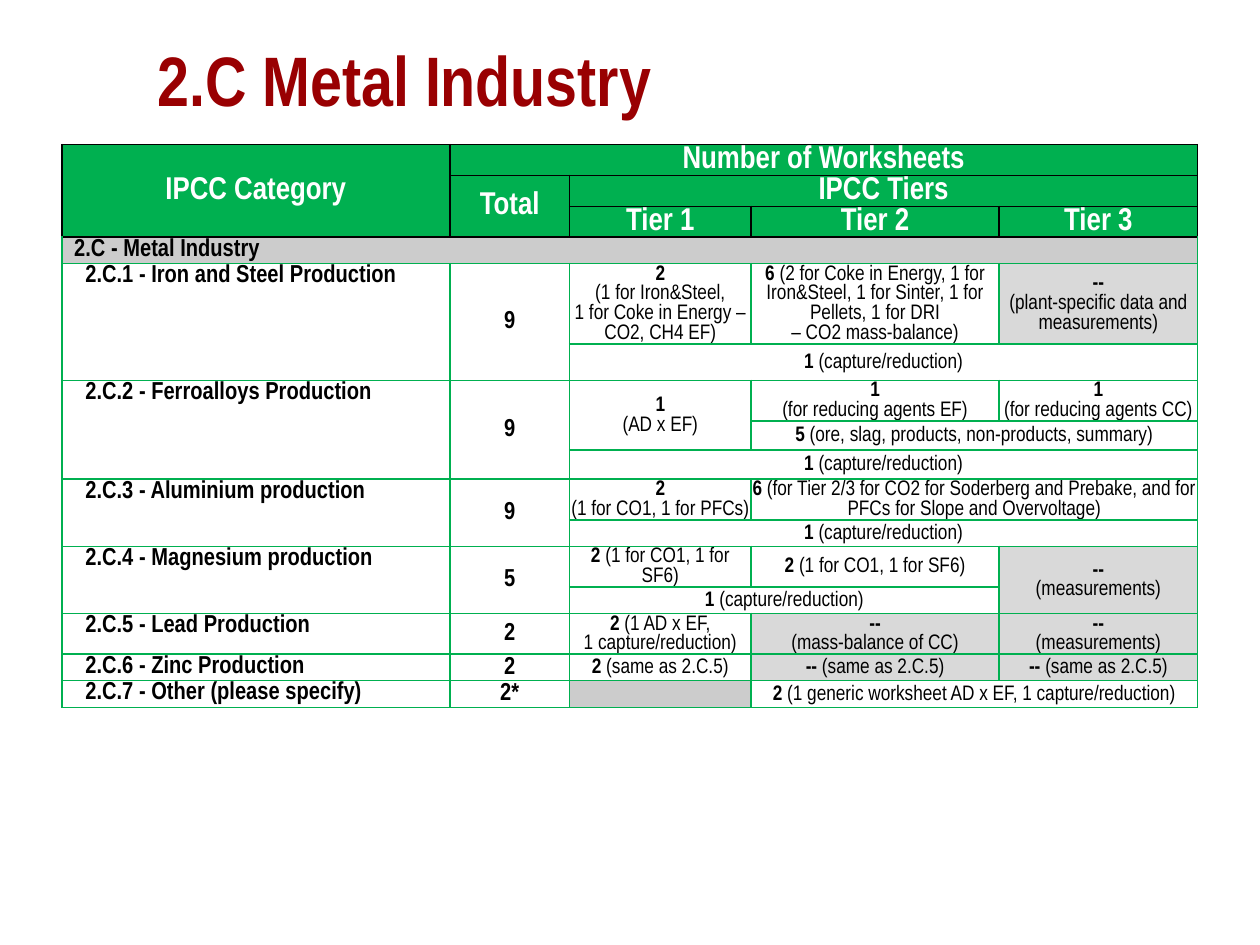
from pptx import Presentation
from pptx.dml.color import RGBColor
from pptx.enum.text import MSO_ANCHOR, MSO_AUTO_SIZE, PP_ALIGN
from pptx.oxml.ns import qn
from pptx.util import Pt
from lxml.etree import SubElement

COLORS = {
    "title": "990002", "green": "00B050", "black": "000000",
    "white": "FFFFFF", "section": "CCCCCC", "unavailable": "D9D9D9",
}
COLUMN_WIDTHS = [221.8, 68.4, 103.7, 141.8, 113.4]
ROW_HEIGHTS = [15.12] * 5 + [20.9] + [16.6] * 3 + [15.12] * 7
HEADER_ROWS = 3
CAPTURE = ["1| (capture/reduction)"]

HEADERS = [
    (0, 0, "IPCC Category", 3, 1),
    (0, 1, "Number of Worksheets", 1, 4),
    (1, 1, "Total", 2, 1),
    (1, 2, "IPCC Tiers", 1, 3),
    (2, 2, "Tier 1", 1, 1),
    (2, 3, "Tier 2", 1, 1),
    (2, 4, "Tier 3", 1, 1),
]
CATEGORIES = [
    ("2.C.1 - Iron and Steel Production", "9", 2),
    ("2.C.2 - Ferroalloys Production", "9", 3),
    ("2.C.3 - Aluminium production", "9", 2),
    ("2.C.4 - Magnesium production", "5", 2),
    ("2.C.5 - Lead Production", "2", 1),
    ("2.C.6 - Zinc Production", "2", 1),
    ("2.C.7 - Other (please specify)", "2*", 1),
]
WORKSHEETS = [
    (4, 2, ["2|", "|(1 for Iron&Steel,", "|1 for Coke in Energy – CO2, CH4 EF)"], 1, 1),
    (4, 3, ["6 |(2 for Coke in Energy, 1 for Iron&Steel, 1 for Sinter, "
            "1 for Pellets, 1 for DRI", "|– CO2 mass-balance)"], 1, 1),
    (5, 2, CAPTURE, 1, 3),
    (6, 2, ["1|", "|(AD x EF)"], 2, 1),
    (6, 3, ["1|", "|(for reducing agents EF)"], 1, 1),
    (6, 4, ["1|", "|(for reducing agents CC)"], 1, 1),
    (7, 3, ["5| (ore, slag, products, non-products, summary)"], 1, 2),
    (8, 2, CAPTURE, 1, 3),
    (9, 2, ["2|", "|(1 for CO1, 1 for PFCs)"], 1, 1),
    (9, 3, ["6| (for Tier 2/3 for CO2 for Soderberg and Prebake, "
            "and for PFCs for Slope and Overvoltage)"], 1, 2),
    (10, 2, CAPTURE, 1, 3),
    (11, 2, ["2| (1 for CO1, 1 for SF6)"], 1, 1),
    (11, 3, ["2| (1 for CO1, 1 for SF6)"], 1, 1),
    (12, 2, CAPTURE, 1, 2),
    (13, 2, ["2| (1 AD x EF,", "|1 capture/reduction)"], 1, 1),
    (14, 2, ["2| (same as 2.C.5)"], 1, 1),
    (15, 3, ["2| (1 generic worksheet AD x EF, 1 capture/reduction)"], 1, 2),
]
UNAVAILABLE = [
    (4, 4, ["--|", "|(plant-specific data and measurements)"], 1, 1),
    (11, 4, ["--|", "|(measurements)"], 2, 1),
    (13, 3, ["--|", "|(mass-balance of CC)"], 1, 1),
    (13, 4, ["--|", "|(measurements)"], 1, 1),
    (14, 3, ["--| (same as 2.C.5)"], 1, 1),
    (14, 4, ["--| (same as 2.C.5)"], 1, 1),
]


class SlideBuilder:
    font_name = "Arial Narrow"

    def __init__(self, slide):
        self.slide = slide

    def run(self, paragraph, text, size, color, bold):
        run = paragraph.add_run()
        run.text = text
        run.font.name = self.font_name
        run.font.size = Pt(size)
        run.font.bold = bold
        run.font.color.rgb = RGBColor.from_string(COLORS[color])

    def title(self, text, left, top, width, height):
        heading = self.slide.shapes.title
        heading.left, heading.top = Pt(left), Pt(top)
        heading.width, heading.height = Pt(width), Pt(height)
        frame = heading.text_frame
        frame.auto_size = MSO_AUTO_SIZE.NONE
        frame.vertical_anchor = MSO_ANCHOR.MIDDLE
        frame.paragraphs[0].alignment = PP_ALIGN.LEFT
        self.run(frame.paragraphs[0], text, 40, "title", True)

    def borders(self, cell, color, top_color):
        properties = cell._tc.get_or_add_tcPr()
        for side in ("lnL", "lnR", "lnT", "lnB"):
            line = SubElement(properties, qn(f"a:{side}"), w=str(Pt(1)))
            fill = SubElement(line, qn("a:solidFill"))
            shade = top_color if side == "lnT" else color
            SubElement(fill, qn("a:srgbClr"), val=COLORS[shade])

    def fill(self, cell, color):
        cell.fill.solid()
        cell.fill.fore_color.rgb = RGBColor.from_string(COLORS[color])

    def table(self, left, top):
        frame = self.slide.shapes.add_table(
            len(ROW_HEIGHTS), len(COLUMN_WIDTHS), Pt(left), Pt(top),
            Pt(sum(COLUMN_WIDTHS)), Pt(sum(ROW_HEIGHTS)))
        self.grid = frame.table
        self.grid.first_row = self.grid.horz_banding = False
        for column, width in zip(self.grid.columns, COLUMN_WIDTHS):
            column.width = Pt(width)
        for index, (row, height) in enumerate(zip(self.grid.rows, ROW_HEIGHTS)):
            row.height = Pt(height)
            line_color = "black" if index < HEADER_ROWS else "green"
            top_color = "black" if index <= HEADER_ROWS else "green"
            for cell in row.cells:
                cell.margin_left = cell.margin_right = cell.margin_top = Pt(0.7)
                cell.margin_bottom = Pt(0)
                self.borders(cell, line_color, top_color)
                self.fill(cell, "white")
                end = cell.text_frame.paragraphs[0]._p.get_or_add_endParaRPr()
                end.set("sz", "1200")

    def cell(self, row, column, lines, row_span=1, column_span=1, fill="white",
             size=12, color="black", indent=None):
        cell = self.grid.cell(row, column)
        if row_span * column_span > 1:
            cell.merge(self.grid.cell(row + row_span - 1, column + column_span - 1))
        self.fill(cell, fill)
        cell.vertical_anchor = MSO_ANCHOR.MIDDLE if indent is None else MSO_ANCHOR.TOP
        if indent is not None:
            cell.margin_left = Pt(indent)
        frame = cell.text_frame
        for index, line in enumerate(lines):
            paragraph = frame.add_paragraph() if index else frame.paragraphs[0]
            paragraph.alignment = PP_ALIGN.CENTER if indent is None else PP_ALIGN.LEFT
            strong, _, detail = line.partition("|")
            for text, bold in ((strong, True), (detail, False)):
                if text:
                    self.run(paragraph, text, size, color, bold)


def main():
    presentation = Presentation()
    presentation.slide_width, presentation.slide_height = Pt(720), Pt(540)
    builder = SlideBuilder(presentation.slides.add_slide(presentation.slide_layouts[5]))
    builder.title("2.C Metal Industry", 82.8, 13, 587.5, 63.4)
    builder.table(35.3, 82.6)

    for row, column, label, row_span, column_span in HEADERS:
        builder.cell(row, column, [label], row_span, column_span,
                     fill="green", size=18, color="white")
    builder.cell(HEADER_ROWS, 0, ["2.C - Metal Industry"], 1, 5,
                 fill="section", size=14, indent=7.1)

    row = HEADER_ROWS + 1
    for category, total, row_span in CATEGORIES:
        builder.cell(row, 0, [category], row_span, size=14, indent=13.5)
        builder.cell(row, 1, [total], row_span, size=14)
        row += row_span

    for worksheet in WORKSHEETS:
        builder.cell(*worksheet)
    for worksheet in UNAVAILABLE:
        builder.cell(*worksheet, fill="unavailable")
    builder.cell(15, 2, [], fill="section")
    presentation.save("out.pptx")


if __name__ == "__main__":
    main()
